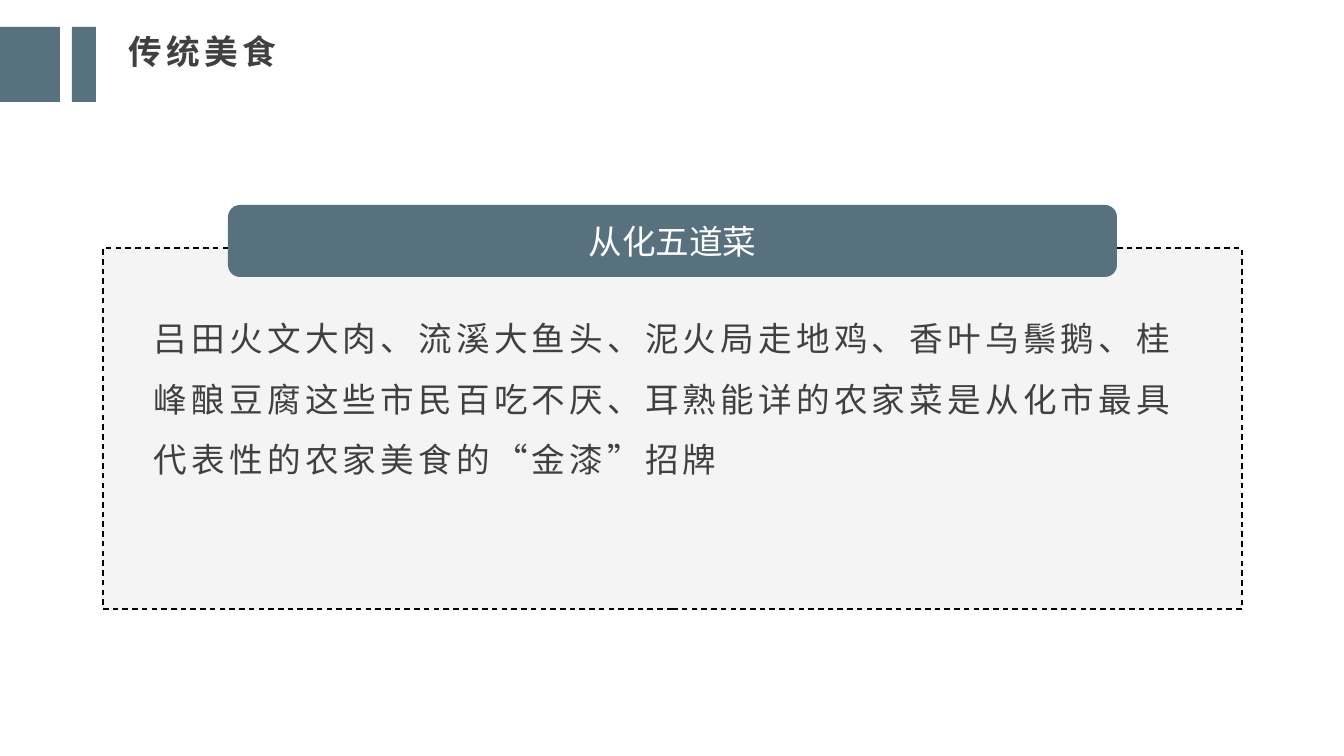
from lxml import etree
from pptx import Presentation
from pptx import util as u
from pptx.dml.color import RGBColor
from pptx.enum import dml, shapes, text
from pptx.oxml.ns import qn

PX = 914400 / 100.8


def px(*vals):
    return [u.Emu(round(v * PX)) for v in vals]


def rgb(code):
    return RGBColor.from_string(code)


class Deck:
    slate = "58717E"
    ink = "404040"
    pale = "F2F2F2"
    white = "FFFFFF"
    sans = "Noto Sans CJK SC"
    plain = "Noto Sans CJK JP"
    size = 24

    def __init__(self, wide, high):
        self.prs = Presentation()
        self.prs.slide_width, self.prs.slide_height = px(wide, high)
        self.slide = self.prs.slides.add_slide(self.prs.slide_layouts[6])

    def block(self, box, fill, kind=shapes.MSO_SHAPE.RECTANGLE):
        item = self.slide.shapes.add_shape(kind, *px(*box))
        item.shadow.inherit = False
        item.fill.solid()
        item.fill.fore_color.rgb = rgb(fill)
        item.line.fill.background()
        return item

    def frame(self, box):
        item = self.block(box, self.pale)
        tone = item.fill._xPr.find(qn("a:solidFill"))[0]
        etree.SubElement(tone, qn("a:alpha"), val="80000")
        item.line.color.rgb = rgb("000000")
        item.line.width = u.Pt(1)
        item.line.dash_style = dml.MSO_LINE.DASH

    def banner(self, box, words):
        item = self.block(box, self.slate, shapes.MSO_SHAPE.ROUNDED_RECTANGLE)
        frame = item.text_frame
        frame.text = words
        frame.vertical_anchor = text.MSO_ANCHOR.MIDDLE
        frame.paragraphs[0].alignment = text.PP_ALIGN.CENTER
        self.style(frame, self.plain, self.white)

    def label(self, box, words, face, bold=False, gap=0, lead=None, inset=None):
        frame = self.slide.shapes.add_textbox(*px(*box)).text_frame
        frame.word_wrap = True
        frame.auto_size = text.MSO_AUTO_SIZE.SHAPE_TO_FIT_TEXT
        if inset:
            side, edge = px(*inset)
            frame.margin_left = frame.margin_right = side
            frame.margin_top = frame.margin_bottom = edge
        frame.text = words
        frame.paragraphs[0].line_spacing = lead
        self.style(frame, face, self.ink, bold, gap)

    def style(self, frame, face, tone, bold=False, gap=0):
        for run in frame.paragraphs[0].runs:
            font = run.font
            font.size = u.Pt(self.size)
            font.bold = bold
            font.color.rgb = rgb(tone)
            font.name = face
            props = run._r.get_or_add_rPr()
            props.set("spc", str(gap * 100))
            etree.SubElement(props, qn("a:ea"), typeface=face)


def main():
    deck = Deck(1344, 756)
    deck.frame((103, 248, 1139, 361))
    deck.label(
        (144, 293, 1076, 186),
        "吕田火文大肉、流溪大鱼头、泥火局走地鸡、香叶乌鬃鹅、"
        "桂峰酿豆腐这些市民百吃不厌、耳熟能详的农家菜是"
        "从化市最具代表性的农家美食的“金漆”招牌",
        deck.plain, gap=3, lead=1.5)
    deck.banner((228, 205, 889, 72), "从化五道菜")
    deck.label((122, 28, 1117, 47), "传统美食", deck.sans,
               bold=True, gap=3, inset=(7, 3))
    for left, wide in ((0, 60), (72, 24)):
        deck.block((left, 27, wide, 75), deck.slate)
    deck.prs.save("out.pptx")


if __name__ == "__main__":
    main()
